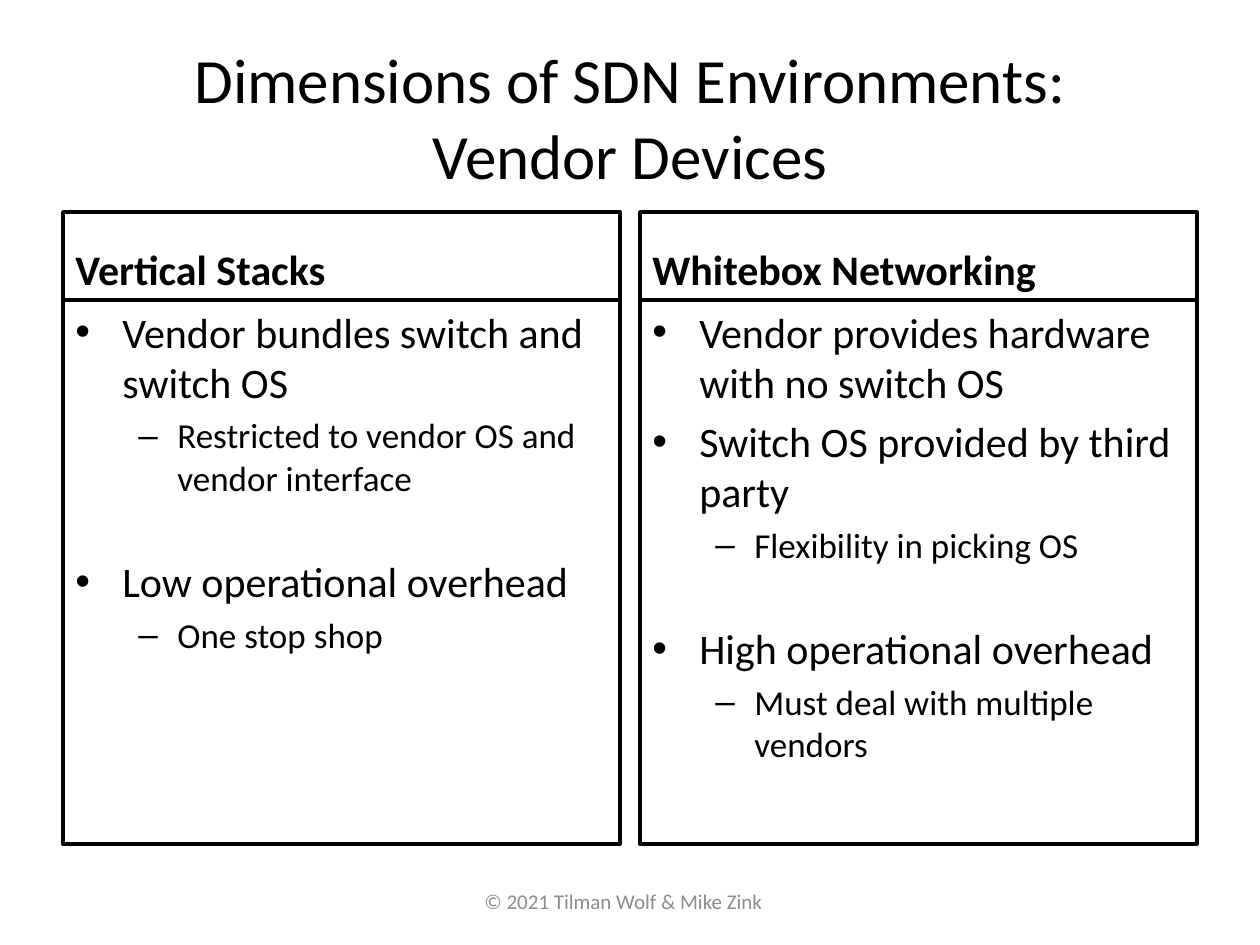
import pptx
import pptx.util
import pptx.dml.color
import pptx.enum.shapes
import pptx.enum.text
import pptx.oxml.ns
import lxml.etree

Pt = pptx.util.Pt
RGBColor = pptx.dml.color.RGBColor
ANCHOR = pptx.enum.text.MSO_ANCHOR
ALIGN = pptx.enum.text.PP_ALIGN

BLACK = RGBColor(0, 0, 0)
WHITE = RGBColor(255, 255, 255)
GRAY = RGBColor(0x8C, 0x8C, 0x8C)
FONT = "Calibri"

TITLE = ["Dimensions of SDN Environments:", "Vendor Devices"]
FOOTER = "© 2021 Tilman Wolf & Mike Zink"
COLUMNS = [
    ("Vertical Stacks", [
        (0, "Vendor bundles switch and switch OS"),
        (1, "Restricted to vendor OS and vendor interface"),
        (0, "Low operational overhead"),
        (1, "One stop shop"),
    ]),
    ("Whitebox Networking", [
        (0, "Vendor provides hardware with no switch OS"),
        (0, "Switch OS provided by third party"),
        (1, "Flexibility in picking OS"),
        (0, "High operational overhead"),
        (1, "Must deal with multiple vendors"),
    ]),
]
LEVELS = [
    {"bullet": "•", "size": 24, "margin": 47, "hang": 47, "before": 4.8},
    {"bullet": "–", "size": 20, "margin": 102, "hang": 39, "before": 4},
]
GROUP_GAP = 33

PX = 914400 / 126
LEFT, COL_W, GUTTER = 63, 557, 20
HEAD_TOP, HEAD_H, BODY_H = 212, 88, 544


def px(n):
    return round(n * PX)


def add_run(p, text, size, color=BLACK, bold=False):
    r = p.add_run()
    r.text = text
    r.font.name = FONT
    r.font.size = Pt(size)
    r.font.bold = bold
    r.font.color.rgb = color


def add_text(x, y, w, h, anchor, wrap=True):
    tf = s.shapes.add_textbox(px(x), px(y), px(w), px(h)).text_frame
    tf.word_wrap = wrap
    tf.vertical_anchor = anchor
    return tf


def add_panel(x, y, h, anchor):
    sp = s.shapes.add_shape(pptx.enum.shapes.MSO_SHAPE.RECTANGLE,
                            px(x), px(y), px(COL_W), px(h))
    sp.shadow.inherit = False
    sp.fill.solid()
    sp.fill.fore_color.rgb = WHITE
    sp.line.color.rgb = BLACK
    sp.line.width = Pt(2)
    tf = sp.text_frame
    tf.word_wrap = True
    tf.vertical_anchor = anchor
    tf.paragraphs[0].alignment = ALIGN.LEFT
    return tf


def add_bullet(p, level):
    style = LEVELS[level]
    p.level = level
    p.alignment = ALIGN.LEFT
    pPr = p._p.get_or_add_pPr()
    pPr.set("marL", str(px(style["margin"])))
    pPr.set("indent", str(-px(style["hang"])))
    qn = pptx.oxml.ns.qn
    lxml.etree.SubElement(pPr, qn("a:buFont")).set("typeface", "Arial")
    lxml.etree.SubElement(pPr, qn("a:buChar")).set("char", style["bullet"])


prs = pptx.Presentation()
prs.slide_width, prs.slide_height = px(1260), px(945)
s = prs.slides.add_slide(prs.slide_layouts[6])

p = add_text(472, 882, 308, 63, ANCHOR.TOP, wrap=False).paragraphs[0]
add_run(p, FOOTER, 12, GRAY)

p = add_text(63, 38, 1134, 157, ANCHOR.MIDDLE).paragraphs[0]
p.alignment = ALIGN.CENTER
for i, line in enumerate(TITLE):
    if i:
        p.add_line_break()
    add_run(p, line, 36)

for col, (heading, items) in enumerate(COLUMNS):
    x = LEFT + col * (COL_W + GUTTER)
    add_run(add_panel(x, HEAD_TOP, HEAD_H, ANCHOR.BOTTOM).paragraphs[0], heading, 24, bold=True)
    tf = add_panel(x, HEAD_TOP + HEAD_H, BODY_H, ANCHOR.TOP)
    previous = 0
    for i, (level, text) in enumerate(items):
        p = tf.add_paragraph() if i else tf.paragraphs[0]
        new_group = level < previous
        p.space_before = Pt(GROUP_GAP if new_group else LEVELS[level]["before"])
        add_bullet(p, level)
        add_run(p, text, LEVELS[level]["size"])
        previous = level

prs.save("out.pptx")
